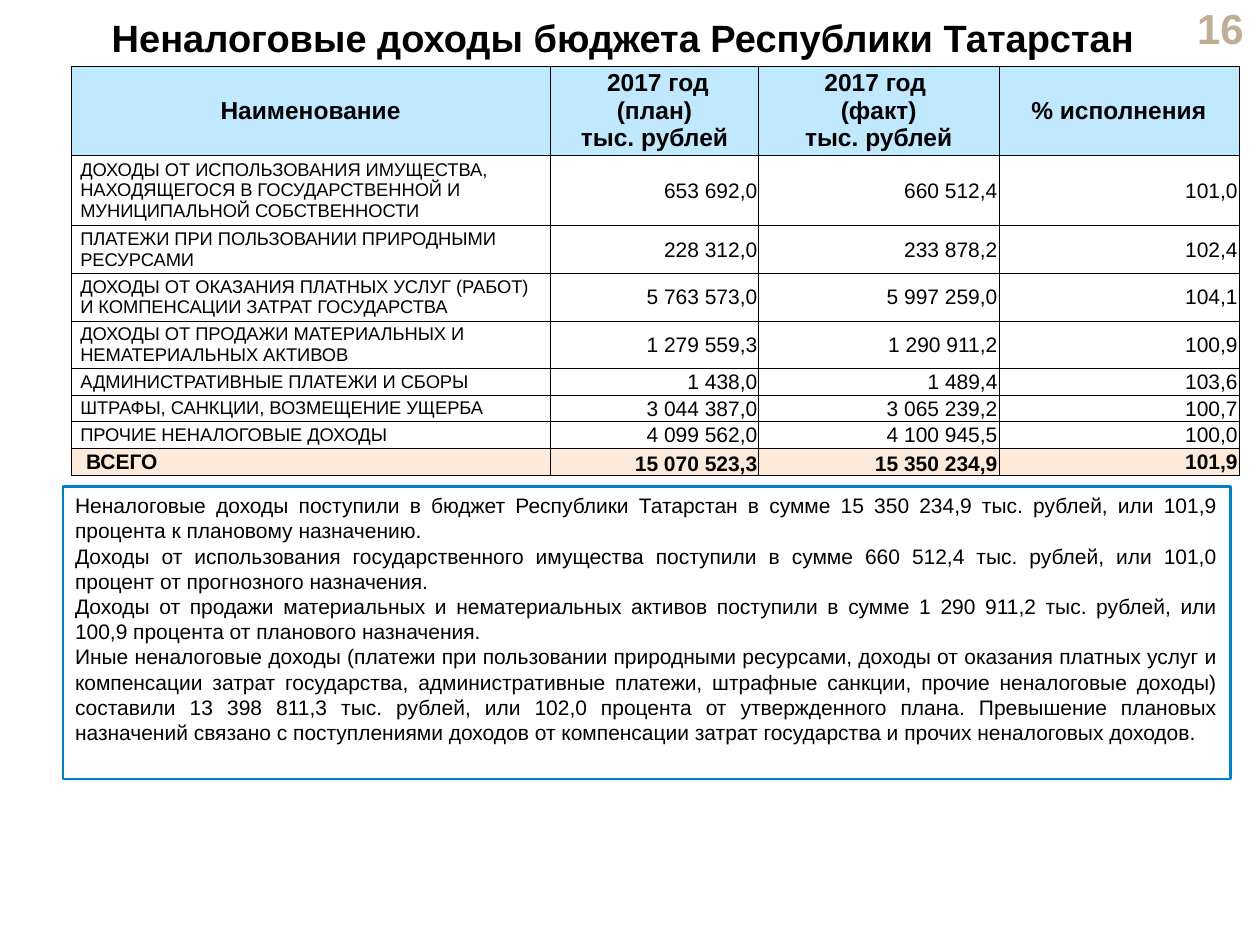
from typing import NamedTuple

from lxml.etree import SubElement
from pptx import Presentation
from pptx.dml.color import RGBColor
from pptx.enum.shapes import MSO_SHAPE as Shape
from pptx.enum.text import MSO_ANCHOR as Anchor, PP_ALIGN as Align
from pptx.oxml.ns import qn
from pptx.util import Pt

FONT = "Arial"
BLACK, WHITE = "000000", "FFFFFF"
HEADER_FILL, TOTAL_FILL = "C0E9FF", "FDEADA"
FRAME_BLUE, NUMBER_BEIGE = "0081C5", "BFAE96"


class Income(NamedTuple):
    name: str
    plan: str
    fact: str
    percent: str
    height: float


class Style(NamedTuple):
    size: float
    bold: bool = False
    align: Align = Align.LEFT
    color: str = BLACK


HEADER = Income("Наименование", " 2017 год (план)\vтыс. рублей",
                "2017 год \v(факт)\vтыс. рублей", "% исполнения", 47.5)
INCOMES = [
    Income("ДОХОДЫ ОТ ИСПОЛЬЗОВАНИЯ ИМУЩЕСТВА, НАХОДЯЩЕГОСЯ В ГОСУДАРСТВЕННОЙ И "
           "МУНИЦИПАЛЬНОЙ СОБСТВЕННОСТИ", "653 692,0", "660 512,4", "101,0", 40.5),
    Income("ПЛАТЕЖИ ПРИ ПОЛЬЗОВАНИИ ПРИРОДНЫМИ РЕСУРСАМИ",
           "228 312,0", "233 878,2", "102,4", 27.2),
    Income("ДОХОДЫ ОТ ОКАЗАНИЯ ПЛАТНЫХ УСЛУГ (РАБОТ) И КОМПЕНСАЦИИ ЗАТРАТ ГОСУДАРСТВА",
           "5 763 573,0", "5 997 259,0", "104,1", 27.2),
    Income("ДОХОДЫ ОТ ПРОДАЖИ МАТЕРИАЛЬНЫХ И НЕМАТЕРИАЛЬНЫХ АКТИВОВ",
           "1 279 559,3", "1 290 911,2", "100,9", 27.2),
    Income("АДМИНИСТРАТИВНЫЕ ПЛАТЕЖИ И СБОРЫ", "1 438,0", "1 489,4", "103,6", 15.2),
    Income("ШТРАФЫ, САНКЦИИ, ВОЗМЕЩЕНИЕ УЩЕРБА",
           "3 044 387,0", "3 065 239,2", "100,7", 15.2),
    Income("ПРОЧИЕ НЕНАЛОГОВЫЕ ДОХОДЫ", "4 099 562,0", "4 100 945,5", "100,0", 15.4),
]
TOTAL = Income(" ВСЕГО", "15 070 523,3", "15 350 234,9", "101,9", 15.4)
COLUMN_WIDTHS = [274, 119, 137.2, 137.2]

COMMENTS = [
    "Неналоговые доходы поступили в бюджет Республики Татарстан в сумме "
    "15 350 234,9 тыс. рублей, или 101,9 процента к плановому назначению. ",
    "Доходы от использования государственного имущества поступили в сумме "
    "660 512,4 тыс. рублей, или 101,0 процент от прогнозного назначения. ",
    "Доходы от продажи материальных и нематериальных активов поступили в сумме "
    "1 290 911,2 тыс. рублей, или 100,9 процента от планового назначения.",
    "Иные неналоговые доходы (платежи при пользовании природными ресурсами, доходы от "
    "оказания платных услуг и компенсации затрат государства, административные платежи, "
    "штрафные санкции, прочие неналоговые доходы) составили 13 398 811,3 тыс. рублей, "
    "или 102,0 процента от утвержденного плана. Превышение плановых назначений связано "
    "с поступлениями доходов от компенсации затрат государства и прочих неналоговых "
    "доходов.",
]


def rgb(value: str) -> RGBColor:
    return RGBColor.from_string(value)


def write(frame, lines: list[str], style: Style) -> None:
    for index, line in enumerate(lines):
        para = frame.paragraphs[0] if index == 0 else frame.add_paragraph()
        para.text = line
        para.alignment = style.align
        para.space_before = Pt(0)
        font = para.font
        font.name, font.size, font.bold = FONT, Pt(style.size), style.bold
        font.color.rgb = rgb(style.color)


def add_borders(cell) -> None:
    properties = cell._tc.get_or_add_tcPr()
    for position, side in enumerate(("a:lnL", "a:lnR", "a:lnT", "a:lnB")):
        line = SubElement(properties, qn(side), w=str(Pt(0.25)))
        fill = SubElement(line, qn("a:solidFill"))
        SubElement(fill, qn("a:srgbClr"), val=BLACK)
        properties.insert(position, line)


def fill_row(table, row: int, income: Income, name_style: Style,
             value_style: Style, fill: str | None = None) -> None:
    table.rows[row].height = Pt(income.height)
    for column, text in enumerate(income[:4]):
        cell = table.cell(row, column)
        wide = column == 0 or row == 0
        cell.margin_left = cell.margin_right = Pt(5.4 if wide else 0.7)
        cell.margin_top = Pt(0 if wide else 0.7)
        cell.margin_bottom = Pt(0)
        cell.vertical_anchor = Anchor.MIDDLE
        if fill:
            cell.fill.solid()
            cell.fill.fore_color.rgb = rgb(fill)
        else:
            cell.fill.background()
        write(cell.text_frame, [text], name_style if column == 0 else value_style)
        add_borders(cell)


def add_income_table(page) -> None:
    count = len(INCOMES) + 2
    height = sum(income.height for income in (HEADER, *INCOMES, TOTAL))
    table = page.shapes.add_table(count, len(COLUMN_WIDTHS), Pt(40.5), Pt(38),
                                  Pt(sum(COLUMN_WIDTHS)), Pt(height)).table
    table.horz_banding = False
    for column, width in zip(table.columns, COLUMN_WIDTHS):
        column.width = Pt(width)

    heading = Style(14, True, Align.CENTER)
    fill_row(table, 0, HEADER, heading, heading, HEADER_FILL)
    for row, income in enumerate(INCOMES, start=1):
        fill_row(table, row, income, Style(10.5), Style(12, align=Align.RIGHT))
    fill_row(table, count - 1, TOTAL, Style(12, True),
             Style(12, True, Align.RIGHT), TOTAL_FILL)
    for column in (1, 2):
        table.cell(count - 1, column).vertical_anchor = Anchor.BOTTOM


def add_comment_box(page) -> None:
    box = page.shapes.add_shape(Shape.RECTANGLE, Pt(35.8), Pt(278), Pt(667.4), Pt(167))
    box.shadow.inherit = False
    box.fill.solid()
    box.fill.fore_color.rgb = rgb(WHITE)
    box.line.color.rgb = rgb(FRAME_BLUE)
    box.line.width = Pt(1.25)
    frame = box.text_frame
    frame.word_wrap = True
    frame.vertical_anchor = Anchor.TOP
    write(frame, COMMENTS, Style(12, align=Align.JUSTIFY))


def main() -> None:
    deck = Presentation()
    deck.slide_width, deck.slide_height = Pt(720), Pt(540)
    page = deck.slides.add_slide(deck.slide_layouts[5])

    # Title
    title = page.shapes.title
    title.left, title.top, title.width, title.height = Pt(40.5), Pt(8), Pt(637), Pt(27)
    title.text_frame.vertical_anchor = Anchor.MIDDLE
    write(title.text_frame, ["Неналоговые доходы бюджета Республики Татарстан "],
          Style(21.7, True, Align.CENTER))

    # Page number
    number = page.shapes.add_textbox(Pt(671.8), Pt(3.6), Pt(46), Pt(24.5))
    number.text_frame.word_wrap = True
    number.text_frame.vertical_anchor = Anchor.MIDDLE
    write(number.text_frame, ["16"], Style(24, True, Align.RIGHT, NUMBER_BEIGE))

    # Table and comments
    add_income_table(page)
    add_comment_box(page)
    deck.save("out.pptx")


if __name__ == "__main__":
    main()
